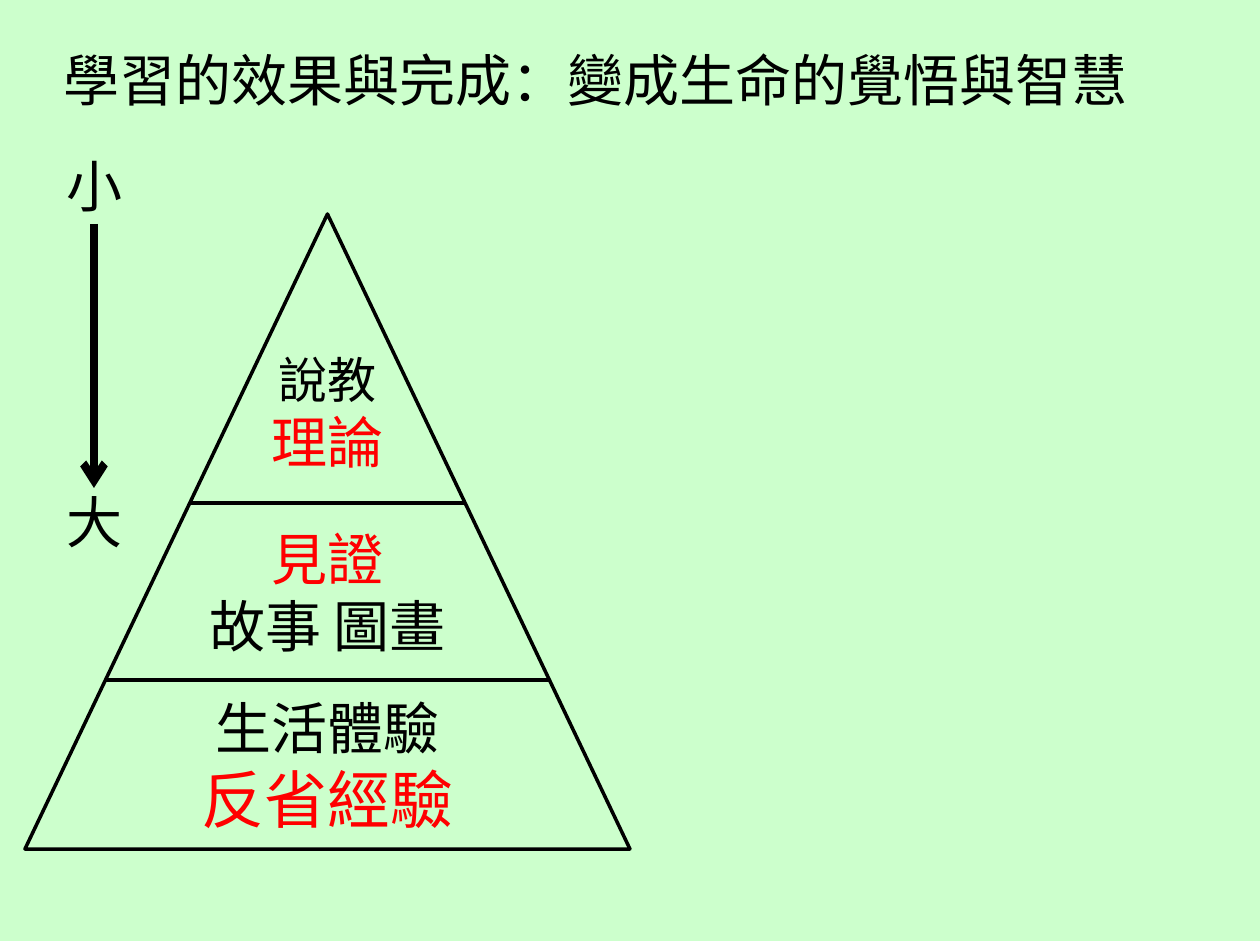
import pptx
import pptx.util
import pptx.dml.color
import pptx.enum.shapes
import pptx.enum.text
from lxml import etree

BLACK = pptx.dml.color.RGBColor(0x00, 0x00, 0x00)
RED = pptx.dml.color.RGBColor(0xFF, 0x00, 0x00)
GREEN = pptx.dml.color.RGBColor(0xCC, 0xFF, 0xCC)
FONT = "Noto Sans CJK SC"
LEFT = pptx.enum.text.PP_ALIGN.LEFT
CENTER = pptx.enum.text.PP_ALIGN.CENTER


def px(n):
    """Turn pixels at 126 to the inch into EMU."""
    return pptx.util.Emu(round(n * 914400 / 126))


def add_sub(parent, tag, **attrs):
    """Append a DrawingML element to parent."""
    return etree.SubElement(parent, pptx.oxml.ns.qn(tag), **attrs)


def write(p, text, size=32, color=BLACK, align=LEFT):
    """Fill a paragraph with one formatted run."""
    p.alignment = align
    r = p.add_run()
    r.text = text
    r.font.size = pptx.util.Pt(size)
    r.font.name = FONT
    r.font.color.rgb = color
    add_sub(r.font._element, "a:ea", typeface=FONT)


def add_label(s, box, lines, align=LEFT):
    """Add a text box with one paragraph for each (text, size, color)."""
    tf = s.shapes.add_textbox(*map(px, box)).text_frame
    tf.word_wrap = False
    for i, (text, size, color) in enumerate(lines):
        p = tf.add_paragraph() if i else tf.paragraphs[0]
        write(p, text, size=size, color=color, align=align)


def add_line(s, x1, y1, x2, y2, width, arrow=False):
    """Add a straight black line, with an arrowhead at its end if asked."""
    c = s.shapes.add_connector(
        pptx.enum.shapes.MSO_CONNECTOR.STRAIGHT, px(x1), px(y1), px(x2), px(y2))
    c.line.color.rgb = BLACK
    c.line.width = pptx.util.Pt(width)
    if arrow:
        add_sub(c.line._get_or_add_ln(), "a:tailEnd", type="arrow")
    add_sub(c._element.spPr, "a:effectLst")


def add_panel(s, box, text):
    """Turn the subtitle placeholder into the coloured panel with the heading."""
    s.shapes.title._element.getparent().remove(s.shapes.title._element)
    sp = s.placeholders[1]
    sp.left, sp.top, sp.width, sp.height = map(px, box)
    sp.fill.solid()
    sp.fill.fore_color.rgb = GREEN
    tf = sp.text_frame
    tf.vertical_anchor = pptx.enum.text.MSO_ANCHOR.TOP
    tf.margin_left, tf.margin_top = px(63), px(50)
    tf.paragraphs[0].space_before = pptx.util.Pt(0)
    write(tf.paragraphs[0], text)


def add_pyramid(s, box, dividers, tiers):
    """Draw a triangle cut by dividers, with a centred label in each tier."""
    x, y, w, h = box
    sp = s.shapes.add_shape(
        pptx.enum.shapes.MSO_SHAPE.ISOSCELES_TRIANGLE, *map(px, box))
    sp.shadow.inherit = False
    sp.fill.background()
    sp.line.color.rgb = BLACK
    sp.line.width = pptx.util.Pt(2)
    mid = x + w / 2
    for dy in dividers:
        half = w * dy / h / 2
        add_line(s, mid - half, y + dy, mid + half, y + dy, 2.25)
    for dy, tw, th, lines in tiers:
        add_label(s, (mid - tw / 2, y + dy, tw, th), lines, align=CENTER)


def add_scale(s, box, top, bottom):
    """Draw a downward arrow between a top and a bottom label."""
    x, y, w, h = box
    label_h = 81
    add_line(s, x + 40, y + 79, x + 40, y + h - 74, 4.5, arrow=True)
    for text, ty in ((top, y), (bottom, y + h - label_h)):
        add_label(s, (x, ty, w, label_h), [(text, 32, BLACK)])


def main():
    """Build and save the slide."""
    prs = pptx.Presentation()
    prs.slide_width, prs.slide_height = px(1260), px(945)
    s = prs.slides.add_slide(prs.slide_layouts[0])
    add_panel(s, (0, -4, 1260, 945), "學習的效果與完成：變成生命的覺悟與智慧")
    add_pyramid(s, (25, 214, 605, 635), (289, 466), (
        (129, 139, 140, [("說教", 28, BLACK), ("理論", 32, RED)]),
        (304, 348, 149, [("見證", 32, RED), ("故事 圖畫", 32, BLACK)]),
        (473, 387, 156, [("生活體驗", 32, BLACK), ("反省經驗", 36, RED)]),
    ))
    add_scale(s, (54, 145, 89, 417), "小", "大")
    prs.save("out.pptx")


if __name__ == "__main__":
    main()
